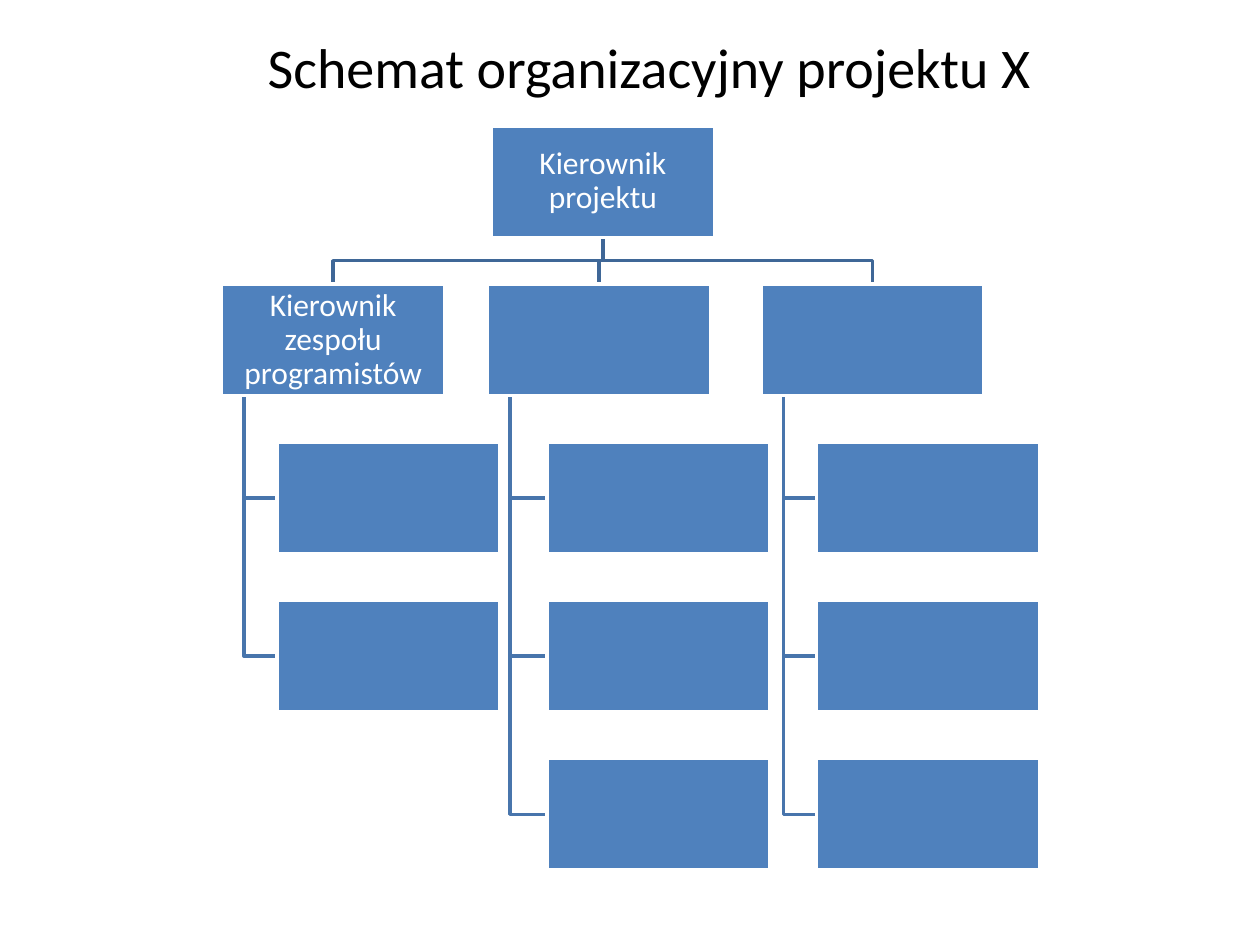
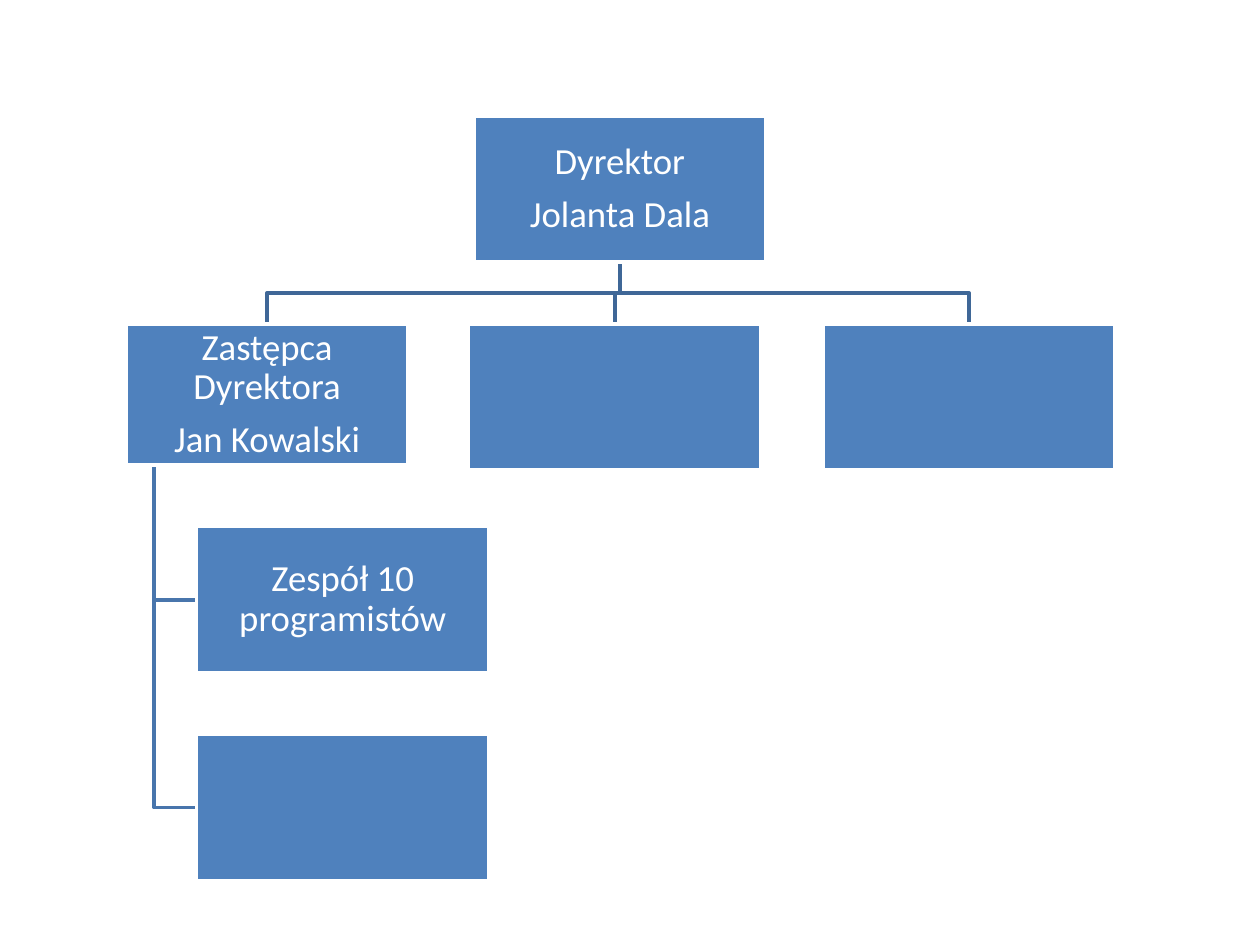
from dataclasses import dataclass

from pptx import Presentation
from pptx.dml.color import RGBColor
from pptx.enum.shapes import MSO_SHAPE as Form
from pptx.enum.text import MSO_ANCHOR as Anchor, PP_ALIGN as Align
from pptx.util import Inches, Pt

FONT = "Calibri"
BLUE, WHITE, BLACK = "4F81BD", "FFFFFF", "000000"
BUS, TREE = "3F6797", "4875AC"
STROKE = 2


@dataclass
class Box:
    left: float
    top: float
    width: float
    lines: tuple = ()

    @property
    def height(self) -> float:
        return self.width / 2

    @property
    def mid(self) -> float:
        return self.left + self.width / 2

    @property
    def base(self) -> float:
        return self.top + self.height


@dataclass
class Branch:
    head: float
    lines: tuple = ()
    team: float = 0
    roles: tuple = ()
    width: float = 0


@dataclass
class Chart:
    root: Box
    gap: float
    size: int
    branches: list


def color(code: str) -> RGBColor:
    return RGBColor.from_string(code)


def write(frame, lines: tuple, *, size: int, ink: str, margin: float = 0.01,
          leading: float = 0.9, after: float = 0.35, anchor=Anchor.MIDDLE) -> None:
    """Fill a text frame; after is a share of the font size."""
    frame.word_wrap = True
    frame.vertical_anchor = anchor
    frame.margin_left = frame.margin_right = Inches(margin)
    frame.margin_top = frame.margin_bottom = Inches(margin)
    for i, line in enumerate(lines):
        para = frame.paragraphs[0] if i == 0 else frame.add_paragraph()
        para.alignment = Align.CENTER
        para.line_spacing = leading
        para.space_after = Pt(size * after)
        run = para.add_run()
        run.text = line
        run.font.name, run.font.size = FONT, Pt(size)
        run.font.color.rgb = color(ink)


def outline(shape, ink: str) -> None:
    shape.shadow.inherit = False
    shape.line.color.rgb = color(ink)
    shape.line.width = Pt(STROKE)


def draw_box(slide, box: Box, size: int) -> None:
    shape = slide.shapes.add_shape(
        Form.RECTANGLE, *map(Inches, (box.left, box.top, box.width, box.height)))
    shape.fill.solid()
    shape.fill.fore_color.rgb = color(BLUE)
    outline(shape, WHITE)
    write(shape.text_frame, box.lines, size=size, ink=WHITE)


def draw_path(slide, ink: str, *points: tuple) -> None:
    first, *rest = [(Inches(x), Inches(y)) for x, y in points]
    pen = slide.shapes.build_freeform(*first)
    pen.add_line_segments(rest, close=False)
    shape = pen.convert_to_shape()
    shape.fill.background()
    outline(shape, ink)


def draw_chart(slide, chart: Chart) -> None:
    """Place heads in a row below the root and each team in a column below its head."""
    root, gap = chart.root, chart.gap
    boxes = [root]
    for branch in chart.branches:
        head = Box(branch.head, root.base + gap, branch.width or root.width, branch.lines)
        boxes.append(head)
        turn = root.base + gap / 2
        draw_path(slide, BUS, (root.mid, root.base), (root.mid, turn),
                  (head.mid, turn), (head.mid, head.top))
        stem = head.left + head.width / 10
        top = head.base + gap
        for lines in branch.roles:
            role = Box(branch.team, top, root.width, lines)
            boxes.append(role)
            level = role.top + role.height / 2
            draw_path(slide, TREE, (stem, head.base), (stem, level), (role.left, level))
            top = role.base + gap
    for box in boxes:
        draw_box(slide, box, chart.size)


def draw_title(slide, text: str) -> None:
    area = slide.shapes.add_textbox(*map(Inches, (0.51, 0.21, 9.29, 0.64)))
    write(area.text_frame, (text,), size=32, ink=BLACK, margin=0.05,
          leading=1.0, after=0, anchor=Anchor.TOP)


PROJECT = Chart(
    Box(3.9, 1, 1.77, ("Kierownik projektu",)), 0.37, 18,
    [Branch(1.76, ("Kierownik zespołu programistów",), 2.2, ((),) * 2),
     Branch(3.87, (), 4.34, ((),) * 3),
     Branch(6.04, (), 6.48, ((),) * 3)])

BOARD = Chart(
    Box(3.76, 0.92, 2.32, ("Dyrektor", "Jolanta Dala")), 0.49, 21,
    [Branch(1, ("Zastępca Dyrektora", "Jan Kowalski"), 1.56,
            (("Zespół 10 programistów",), ()), width=2.24),
     Branch(3.72),
     Branch(6.53)])


def main() -> None:
    deck = Presentation()
    deck.slide_width, deck.slide_height = Inches(10), Inches(7.5)
    blank = deck.slide_layouts[6]
    for chart, title in ((PROJECT, "Schemat organizacyjny projektu X"), (BOARD, "")):
        slide = deck.slides.add_slide(blank)
        draw_chart(slide, chart)
        if title:
            draw_title(slide, title)
    deck.save("out.pptx")


if __name__ == "__main__":
    main()
